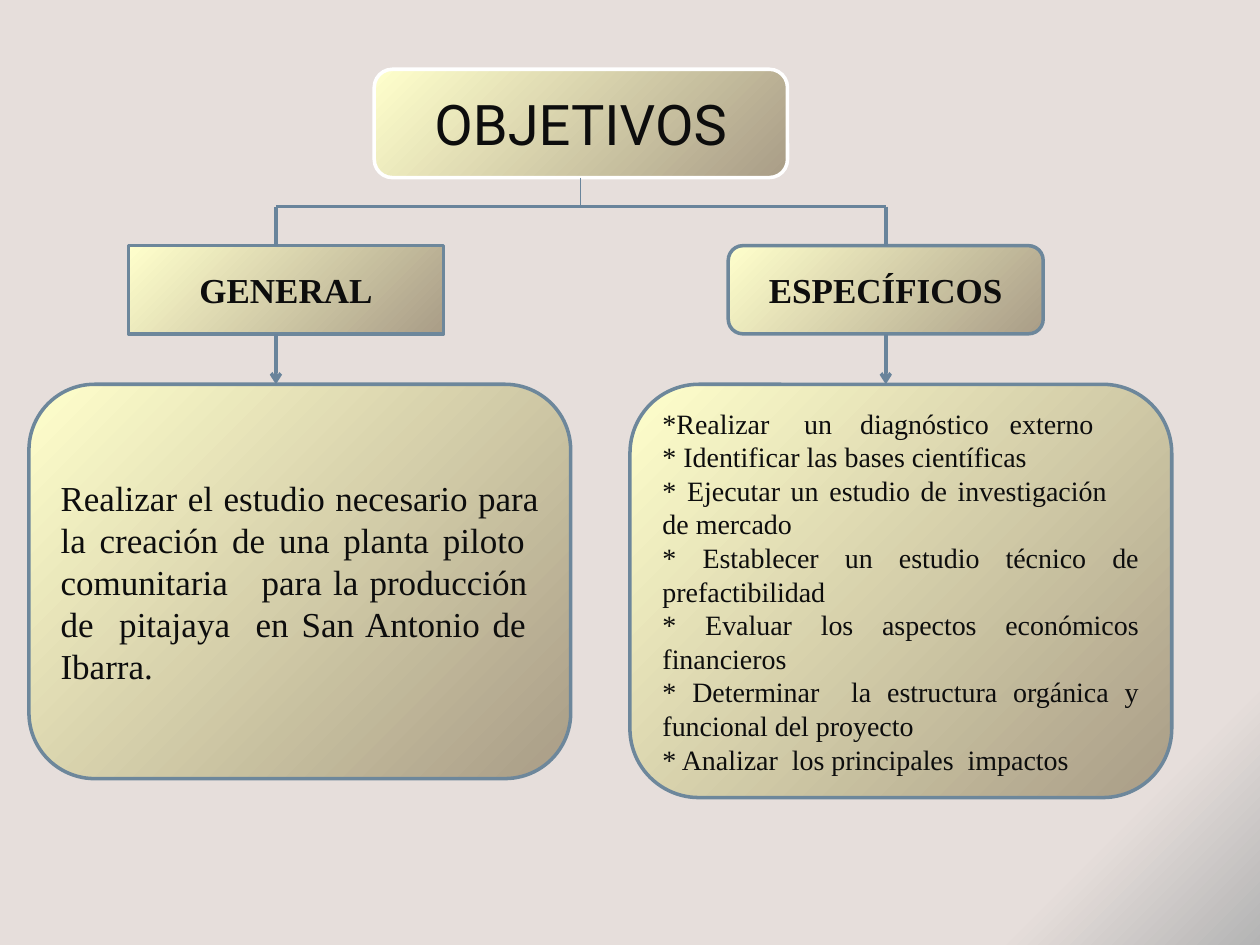
from lxml import etree
from pptx import Presentation
from pptx.dml.color import RGBColor
from pptx.enum.shapes import MSO_CONNECTOR, MSO_SHAPE
from pptx.enum.text import MSO_ANCHOR, PP_ALIGN
from pptx.oxml.ns import qn
from pptx.util import Inches, Pt

ROUNDED = MSO_SHAPE.ROUNDED_RECTANGLE
STRAIGHT = MSO_CONNECTOR.STRAIGHT
MIDDLE = MSO_ANCHOR.MIDDLE
CENTER, JUSTIFY = PP_ALIGN.CENTER, PP_ALIGN.JUSTIFY
TOP, BOTTOM = 0, 2
TITLE_ONLY = 5
COLUMNS, ROWS = 100, 75

GENERAL_GOAL = (
    "Realizar el estudio necesario para la creación de una planta piloto  comunitaria   "
    "para la producción  de  pitajaya  en San Antonio de  Ibarra."
)
SPECIFIC_GOALS = [
    "*Realizar     un    diagnóstico   externo",
    "* Identificar las bases científicas",
    "* Ejecutar un estudio de investigación    de mercado",
    "* Establecer un estudio técnico de prefactibilidad",
    "* Evaluar los aspectos económicos financieros",
    "* Determinar  la estructura orgánica y funcional del proyecto",
    "* Analizar  los principales  impactos",
]


def color(hex_string):
    return RGBColor.from_string(hex_string)


def corner_gradient(fill, element, stops):
    """Fill with a gradient that spreads from the top left corner."""
    fill.gradient()
    for stop, (position, hex_string) in zip(fill.gradient_stops, stops):
        stop.position = position
        stop.color.rgb = color(hex_string)
    linear = next(element.iter(qn("a:lin")))
    circle = etree.Element(qn("a:path"), path="circle")
    etree.SubElement(circle, qn("a:fillToRect"), r="100000", b="100000")
    linear.getparent().replace(linear, circle)


class ObjectivesSlide:
    serif = "Times New Roman"
    sans = "Roboto"
    ink = "0D0D0D"
    outline = "6D879B"
    connector_color = "69849B"
    box_stops = [(0, "FFFFCC"), (1, "A99D87")]
    background_stops = [(0.88, "E6DEDB"), (1, "B4B4B4")]

    def __init__(self, presentation):
        self.column = presentation.slide_width / COLUMNS
        self.row = presentation.slide_height / ROWS
        self.slide = presentation.slides.add_slide(presentation.slide_layouts[TITLE_ONLY])
        corner_gradient(self.slide.background.fill, self.slide.element, self.background_stops)

    def place(self, column, row):
        return round(column * self.column), round(row * self.row)

    def style(self, shape, lines, size, font=None, bold=False, align=CENTER, outline=None):
        corner_gradient(shape.fill, shape.element, self.box_stops)
        shape.line.color.rgb = color(outline or self.outline)
        shape.line.width = Pt(2)
        frame = shape.text_frame
        frame.word_wrap = True
        frame.vertical_anchor = MIDDLE
        frame.text = "\n".join(lines)
        for paragraph in frame.paragraphs:
            paragraph.alignment = align
            paragraph.font.name = font or self.serif
            paragraph.font.size = Pt(size)
            paragraph.font.bold = bold
            paragraph.font.color.rgb = color(self.ink)

    def title(self, at, text, **style):
        shape = self.slide.shapes.title
        shape.left, shape.top = self.place(*at[:2])
        shape.width, shape.height = self.place(*at[2:])
        self.style(shape, [text], **style)
        return shape

    def box(self, at, lines, **style):
        shape = self.slide.shapes.add_shape(ROUNDED, *self.place(*at[:2]), *self.place(*at[2:]))
        shape.shadow.inherit = False
        self.style(shape, lines, **style)
        return shape

    def connector(self, start, end, width=2, arrow=False, begin=None, finish=None):
        """Draw a line; begin and finish are optional (shape, side) joins."""
        line = self.slide.shapes.add_connector(STRAIGHT, *self.place(*start), *self.place(*end))
        if begin:
            line.begin_connect(*begin)
        if finish:
            line.end_connect(*finish)
        line.line.color.rgb = color(self.connector_color)
        line.line.width = Pt(width)
        if arrow:
            etree.SubElement(line.line._get_or_add_ln(), qn("a:tailEnd"), type="arrow")
        etree.SubElement(line.element.spPr, qn("a:effectLst"))


def main():
    presentation = Presentation()
    presentation.slide_width = Inches(10)
    presentation.slide_height = Inches(7.5)
    page = ObjectivesSlide(presentation)

    label_top, label_bottom, body_top, branch = 19.5, 26.5, 30.5, 16.4
    label_size = (25, label_bottom - label_top)
    general_x, specific_x, root_x = 21.9, 70.3, 46.1

    root = page.box((29.7, 5.5, 32.8, 8.6), ["OBJETIVOS"], size=32, font=page.sans, outline="FFFFFF")
    page.title((10.2, label_top, *label_size), "GENERAL", size=20, bold=True)
    specific = page.box((57.8, label_top, *label_size), ["ESPECÍFICOS"], size=20, bold=True)
    page.box((2.3, body_top, 43, 31.3), [GENERAL_GOAL], size=20, align=JUSTIFY)
    page.box((50, body_top, 43, 32.8), SPECIFIC_GOALS, size=16, align=JUSTIFY)

    page.connector((general_x, branch), (specific_x, branch), width=1.5)
    for x, label in ((general_x, None), (specific_x, specific)):
        page.connector((x, branch), (x, label_top), finish=label and (label, TOP))
        page.connector((x, label_bottom), (x, body_top), arrow=True, begin=label and (label, BOTTOM))
    page.connector((root_x, 14.1), (root_x, branch), width=0.75, begin=(root, BOTTOM))

    presentation.save("out.pptx")


if __name__ == "__main__":
    main()
